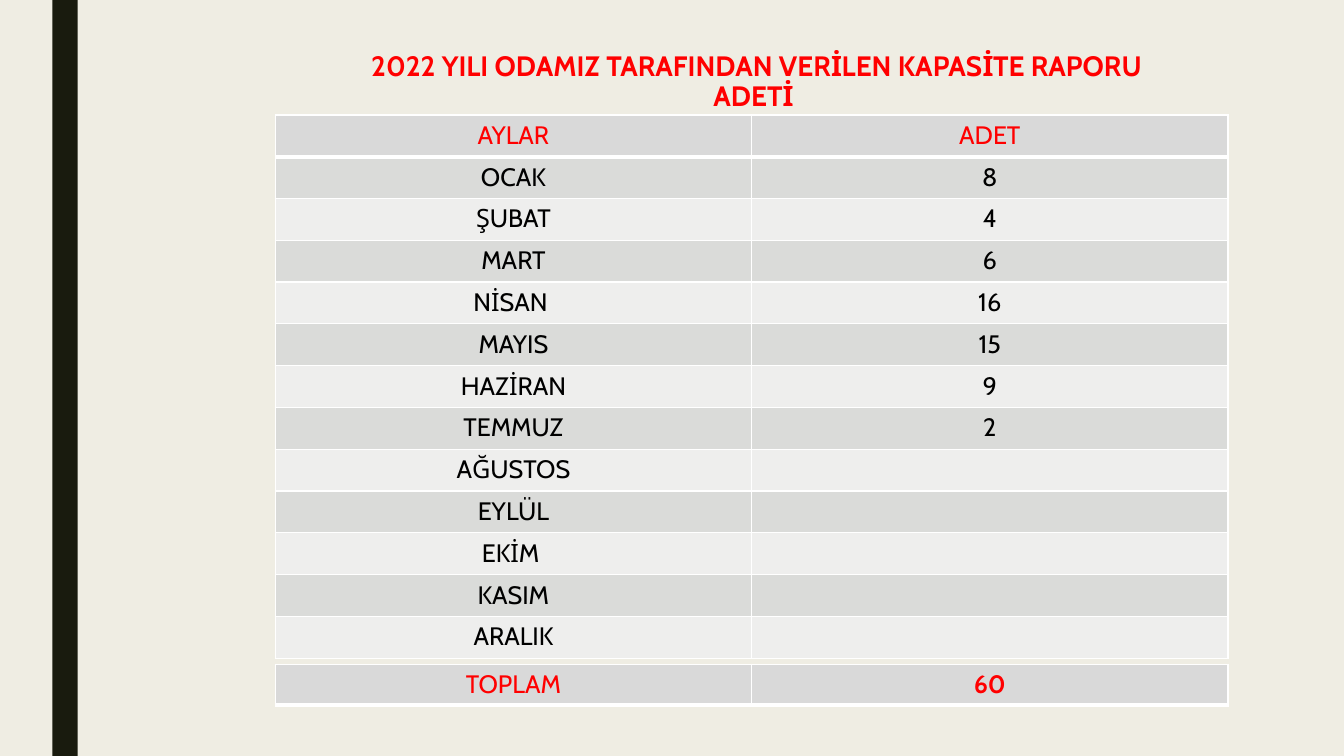
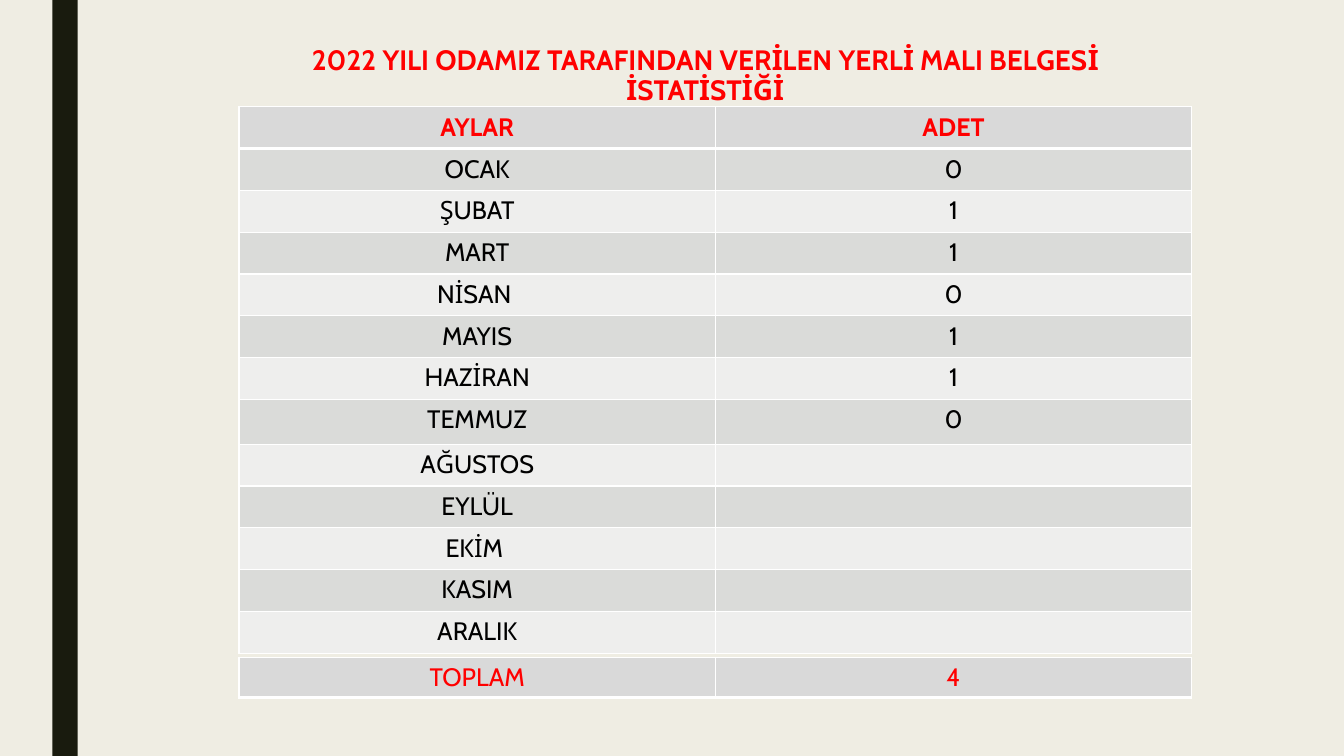
import pptx
import pptx.dml.color
import pptx.enum.shapes
import pptx.enum.text
import pptx.oxml.ns
import pptx.util
from lxml import etree
from pptx.util import Inches

COLOURS = {
    "background": "EFEDE3", "side_band": "191B0E", "accent": "FF0000", "body": "000000",
    "border": "FFFFFF", "heading": "D9D9D9", "odd": "DADBD9", "even": "EEEEED",
}
FONT = "Cabin"
MONTHS = ["OCAK", "ŞUBAT", "MART", "NİSAN ", "MAYIS", "HAZİRAN", "TEMMUZ",
          "AĞUSTOS", "EYLÜL", "EKİM ", "KASIM", "ARALIK"]
TABLE_WIDTH, MONTHS_HEIGHT, TOTAL_HEIGHT = 9.45, 5.39, 0.4
HEADING_TEXT = {"size": 18, "colour": "accent"}
BODY_TEXT = {"size": 18, "colour": "body"}
TITLE_TEXT = {"size": 20, "colour": "accent", "bold": True}

REPORTS = [
    {
        "title": "2022 YILI ODAMIZ TARAFINDAN VERİLEN KAPASİTE RAPORU ADETİ ",
        "title_box": (3.39, 0.47, 8.23, 0.42),
        "left": 2.73, "months_top": 1.14, "total_top": 6.59,
        "counts": [8, 4, 6, 16, 15, 9, 2],
        "bold_heading": False, "bold_total": True, "extra_heights": {},
    },
    {
        "title": "2022 YILI ODAMIZ TARAFINDAN VERİLEN YERLİ MALI BELGESİ İSTATİSTİĞİ",
        "title_box": (2.46, 0.41, 9.07, 0.49),
        "left": 2.37, "months_top": 1.06, "total_top": 6.52,
        "counts": [0, 1, 1, 0, 1, 1, 0],
        "bold_heading": True, "bold_total": False, "extra_heights": {7: 0.03},
    },
]


def colour(name):
    return pptx.dml.color.RGBColor.from_string(COLOURS[name])


def fill_solid(fill, name):
    fill.solid()
    fill.fore_color.rgb = colour(name)


def write(text_frame, text, style, bold=False):
    paragraph = text_frame.paragraphs[0]
    paragraph.alignment = pptx.enum.text.PP_ALIGN.CENTER
    if text:
        run = paragraph.add_run()
        run.text = text
        settings = {"name": FONT, "size": pptx.util.Pt(style["size"]),
                    "bold": style.get("bold", bold)}
        for attribute, value in settings.items():
            setattr(run.font, attribute, value)
        run.font.color.rgb = colour(style["colour"])
    return paragraph


def set_borders(cell, top, bottom):
    properties = cell._tc.get_or_add_tcPr()
    for side, points in {"L": 1, "R": 1, "T": top, "B": bottom}.items():
        line = etree.SubElement(properties, pptx.oxml.ns.qn(f"a:ln{side}"),
                                w=str(pptx.util.Pt(points)))
        fill = etree.SubElement(line, pptx.oxml.ns.qn("a:solidFill"))
        etree.SubElement(fill, pptx.oxml.ns.qn("a:srgbClr"), val=COLOURS["border"])


def add_count_table(slide, left, top, height, rows, bold, extra_heights):
    table = slide.shapes.add_table(len(rows), 2, Inches(left), Inches(top),
                                   Inches(TABLE_WIDTH), Inches(height)).table
    for flag in ("first_row", "horz_banding"):
        setattr(table, flag, False)
    for column in table.columns:
        column.width = Inches(TABLE_WIDTH / 2)
    for index, texts in enumerate(rows):
        table.rows[index].height = Inches(height / len(rows) + extra_heights.get(index, 0))
        is_heading = index == 0
        band = "heading" if is_heading else ("odd" if index % 2 else "even")
        for cell, text, is_bold in zip(table.rows[index].cells, texts, bold):
            set_borders(cell, 3 if index == 1 else 1, 3 if is_heading else 1)
            fill_solid(cell.fill, band)
            style = HEADING_TEXT if is_heading else BODY_TEXT
            write(cell.text_frame, text, style, is_heading and is_bold)


def add_base(presentation):
    slide = presentation.slides.add_slide(presentation.slide_layouts[6])
    fill_solid(slide.background.fill, "background")
    side_band = slide.shapes.add_shape(
        pptx.enum.shapes.MSO_SHAPE.RECTANGLE, Inches(0.52), 0,
        Inches(0.25), presentation.slide_height)
    side_band.shadow.inherit = False
    fill_solid(side_band.fill, "side_band")
    side_band.line.fill.background()
    return slide


def add_report(presentation, report):
    slide = add_base(presentation)
    title = slide.shapes.add_textbox(*map(Inches, report["title_box"])).text_frame
    title.word_wrap = True
    write(title, report["title"], TITLE_TEXT).line_spacing = 0.89
    counts = [str(count) for count in report["counts"]]
    counts += [""] * (len(MONTHS) - len(counts))
    add_count_table(slide, report["left"], report["months_top"], MONTHS_HEIGHT,
                    [("AYLAR", "ADET"), *zip(MONTHS, counts)],
                    (report["bold_heading"],) * 2, report["extra_heights"])
    add_count_table(slide, report["left"], report["total_top"], TOTAL_HEIGHT,
                    [("TOPLAM", str(sum(report["counts"])))],
                    (False, report["bold_total"]), {})


def main():
    presentation = pptx.Presentation()
    presentation.slide_width = Inches(13.33)
    presentation.slide_height = Inches(7.5)
    for report in REPORTS:
        add_report(presentation, report)
    presentation.save("out.pptx")


if __name__ == "__main__":
    main()
